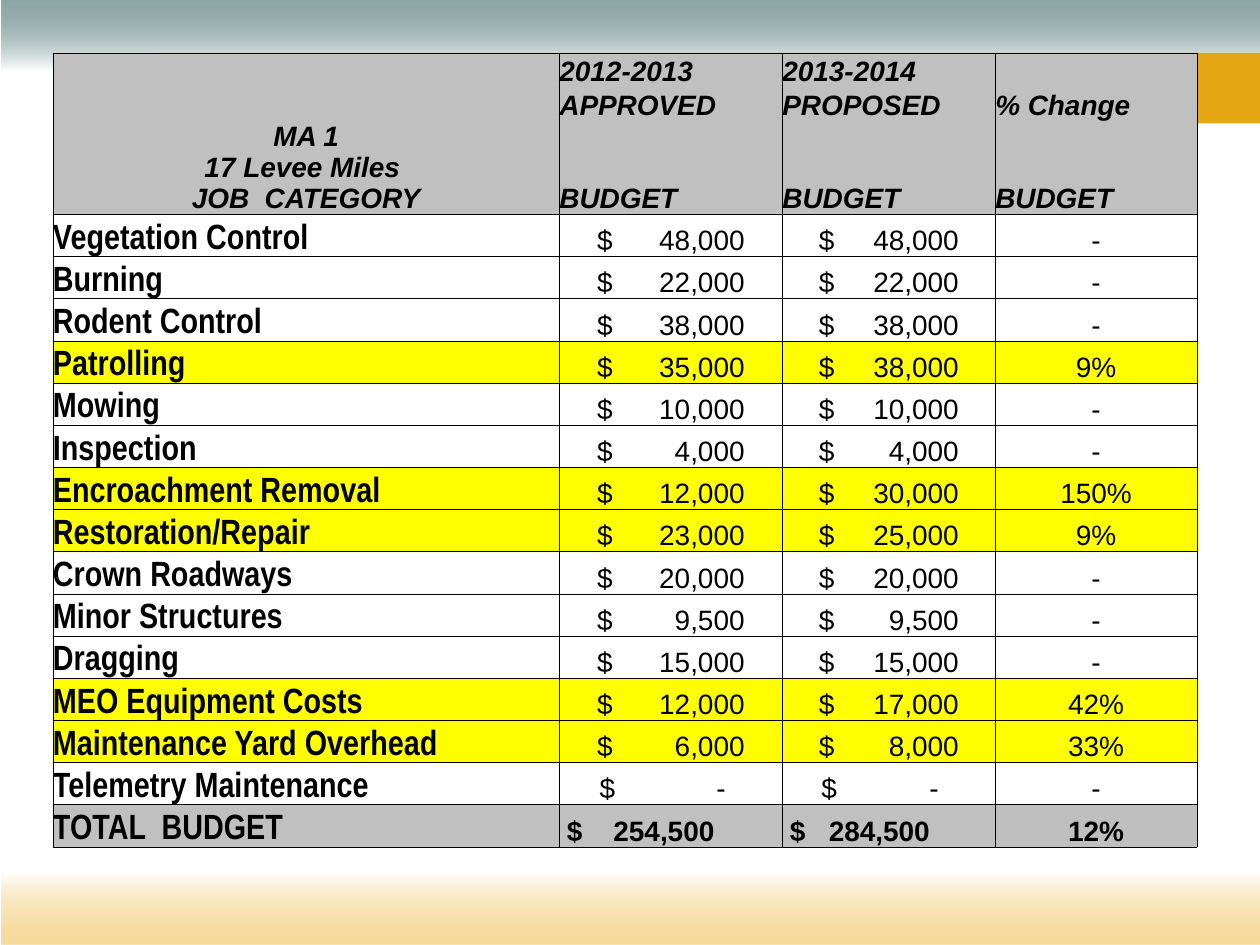
from lxml import etree
from pptx import Presentation
from pptx.dml.color import RGBColor
from pptx.enum import shapes, text
from pptx.oxml import ns
from pptx.util import Inches, Pt

BLACK = RGBColor(0, 0, 0)
WHITE = RGBColor(0xFF, 0xFF, 0xFF)
TEAL = RGBColor(0x21, 0x53, 0x52)
GOLD = RGBColor(0xE7, 0xA6, 0x14)
AMBER = RGBColor(0xEE, 0xB8, 0x40)
GRAY = RGBColor(0xC0, 0xC0, 0xC0)
TOTAL_GRAY = RGBColor(0xBF, 0xBF, 0xBF)
YELLOW = RGBColor(0xFF, 0xFF, 0)

LEFT, CENTER = text.PP_ALIGN.LEFT, text.PP_ALIGN.CENTER
NO_GRID = "{2D5ABB26-0587-4C30-8999-92F81FD0307C}"

TITLE = ["MA 1", "17 Levee Miles ", "JOB  CATEGORY"]
HEADINGS = [
    ("2012-2013", "2013-2014", ""),
    ("APPROVED", "PROPOSED", "% Change"),
    ("BUDGET", "BUDGET", "BUDGET"),
]
JOBS = [
    ("Vegetation Control", "48,000", "48,000", "-"),
    ("Burning", "22,000", "22,000", "-"),
    ("Rodent Control", "38,000", "38,000", "-"),
    ("Patrolling", "35,000", "38,000", "9%"),
    ("Mowing", "10,000", "10,000", "-"),
    ("Inspection", "4,000", "4,000", "-"),
    ("Encroachment Removal", "12,000", "30,000", "150%"),
    ("Restoration/Repair", "23,000", "25,000", "9%"),
    ("Crown Roadways", "20,000", "20,000", "-"),
    ("Minor Structures", "9,500", "9,500", "-"),
    ("Dragging", "15,000", "15,000", "-"),
    ("MEO Equipment Costs", "12,000", "17,000", "42%"),
    ("Maintenance Yard Overhead", "6,000", "8,000", "33%"),
    ("Telemetry Maintenance", "-", "-", "-"),
]
TOTAL = ("TOTAL  BUDGET", "254,500", "284,500", "12%")

COL_WIDTHS = [4.02, 1.77, 1.69, 1.6]
HEAD_H, TABLE_H = 0.27, 5.83
BODY_H = (TABLE_H - len(HEADINGS) * HEAD_H) / (len(JOBS) + 1)

# (dollar sign, right edge of the amount) for each money column
AMOUNT_TABS = [(0.3, 1.47), (0.29, 1.4)]
NIL_TABS = [(0.32, 1.32), (0.31, 1.24)]
TOTAL_TABS = [(0.06, 1.23), (0.06, 1.17)]


def add_band(s, x, y, w, h, color, angle=None):
    sp = s.shapes.add_shape(shapes.MSO_SHAPE.RECTANGLE, *map(Inches, (x, y, w, h)))
    sp.shadow.inherit = False
    sp.line.fill.background()
    if angle is None:
        sp.fill.solid()
        sp.fill.fore_color.rgb = color
        return
    sp.fill.gradient()
    sp.fill.gradient_angle = angle
    start, end = sp.fill.gradient_stops
    start.color.rgb, start.position = color, 0
    end.color.rgb, end.position = WHITE, 0.52
    clr = sp._element.spPr.find(".//" + ns.qn("a:srgbClr"))
    etree.SubElement(clr, ns.qn("a:alpha"), val="51000")


def set_borders(cell, sides):
    tcPr = cell._tc.get_or_add_tcPr()
    for i, side in enumerate(x for x in "LRTB" if x in sides):
        ln = etree.Element(ns.qn("a:ln" + side), w=str(Pt(0.5)))
        fill = etree.SubElement(ln, ns.qn("a:solidFill"))
        etree.SubElement(fill, ns.qn("a:srgbClr"), val=str(BLACK))
        tcPr.insert(i, ln)


def write(cell, lines, size=16, font="Arial", bold=False, italic=False,
          align=LEFT, fill=None, sides="LRTB", tabs=None):
    cell.margin_left = cell.margin_right = cell.margin_top = cell.margin_bottom = 0
    cell.vertical_anchor = text.MSO_ANCHOR.BOTTOM
    if fill is None:
        cell.fill.background()
    else:
        cell.fill.solid()
        cell.fill.fore_color.rgb = fill
    set_borders(cell, sides)
    tf = cell.text_frame
    for i, line in enumerate(lines):
        p = tf.paragraphs[0] if i == 0 else tf.add_paragraph()
        p.alignment = align
        if tabs:
            start, end = tabs
            cell.margin_left = Inches(start)
            tab_list = etree.SubElement(p._p.get_or_add_pPr(), ns.qn("a:tabLst"))
            etree.SubElement(tab_list, ns.qn("a:tab"), pos=str(Inches(end - start)), algn="r")
        if not line:
            p._p.get_or_add_endParaRPr().set("sz", str(size * 100))
            continue
        r = p.add_run()
        r.text = line
        r.font.size, r.font.name = Pt(size), font
        r.font.bold, r.font.italic = bold, italic
        r.font.color.rgb = BLACK


def write_row(table, row, values, tab_stops, fill=None, last_fill=None, bold=False):
    name, *amounts, change = values
    write(table.cell(row, 0), [name], size=20, font="Arial Narrow", bold=True, fill=fill)
    for col, (amount, tabs) in enumerate(zip(amounts, tab_stops), 1):
        write(table.cell(row, col), ["$\t" + amount], bold=bold, fill=fill, tabs=tabs)
    write(table.cell(row, 3), [change], bold=bold, align=CENTER, fill=last_fill or fill)


def add_budget(s):
    rows = len(HEADINGS) + len(JOBS) + 1
    frame = s.shapes.add_table(rows, len(COL_WIDTHS), Inches(0.42), Inches(0.42),
                               Inches(sum(COL_WIDTHS)), Inches(TABLE_H))
    table = frame.table
    table.first_row = table.horz_banding = False
    table._tbl.tblPr.find(ns.qn("a:tableStyleId")).text = NO_GRID
    for col, width in zip(table.columns, COL_WIDTHS):
        col.width = Inches(width)
    for i, row in enumerate(table.rows):
        row.height = Inches(HEAD_H if i < len(HEADINGS) else BODY_H)

    table.cell(0, 0).merge(table.cell(len(HEADINGS) - 1, 0))
    write(table.cell(0, 0), TITLE, bold=True, italic=True, align=CENTER, fill=GRAY)
    for i, (labels, edge) in enumerate(zip(HEADINGS, ("T", "", "B"))):
        for col, label in enumerate(labels, 1):
            write(table.cell(i, col), [label], bold=True, italic=True,
                  fill=GRAY, sides="LR" + edge)
    for i, job in enumerate(JOBS, len(HEADINGS)):
        write_row(table, i, job, NIL_TABS if job[1] == "-" else AMOUNT_TABS,
                  fill=None if job[3] == "-" else YELLOW)
    write_row(table, rows - 1, TOTAL, TOTAL_TABS, fill=GRAY, last_fill=TOTAL_GRAY, bold=True)


def main():
    prs = Presentation()
    prs.slide_width, prs.slide_height = Inches(10), Inches(7.5)
    s = prs.slides.add_slide(prs.slide_layouts[6])
    add_band(s, 0.01, 0, 9.99, 1.09, TEAL, angle=270)
    add_band(s, 1.25, 0.42, 8.75, 0.56, GOLD)
    add_band(s, 0.01, 6.39, 9.99, 1.11, AMBER, angle=90)
    add_budget(s)
    prs.save("out.pptx")


if __name__ == "__main__":
    main()
